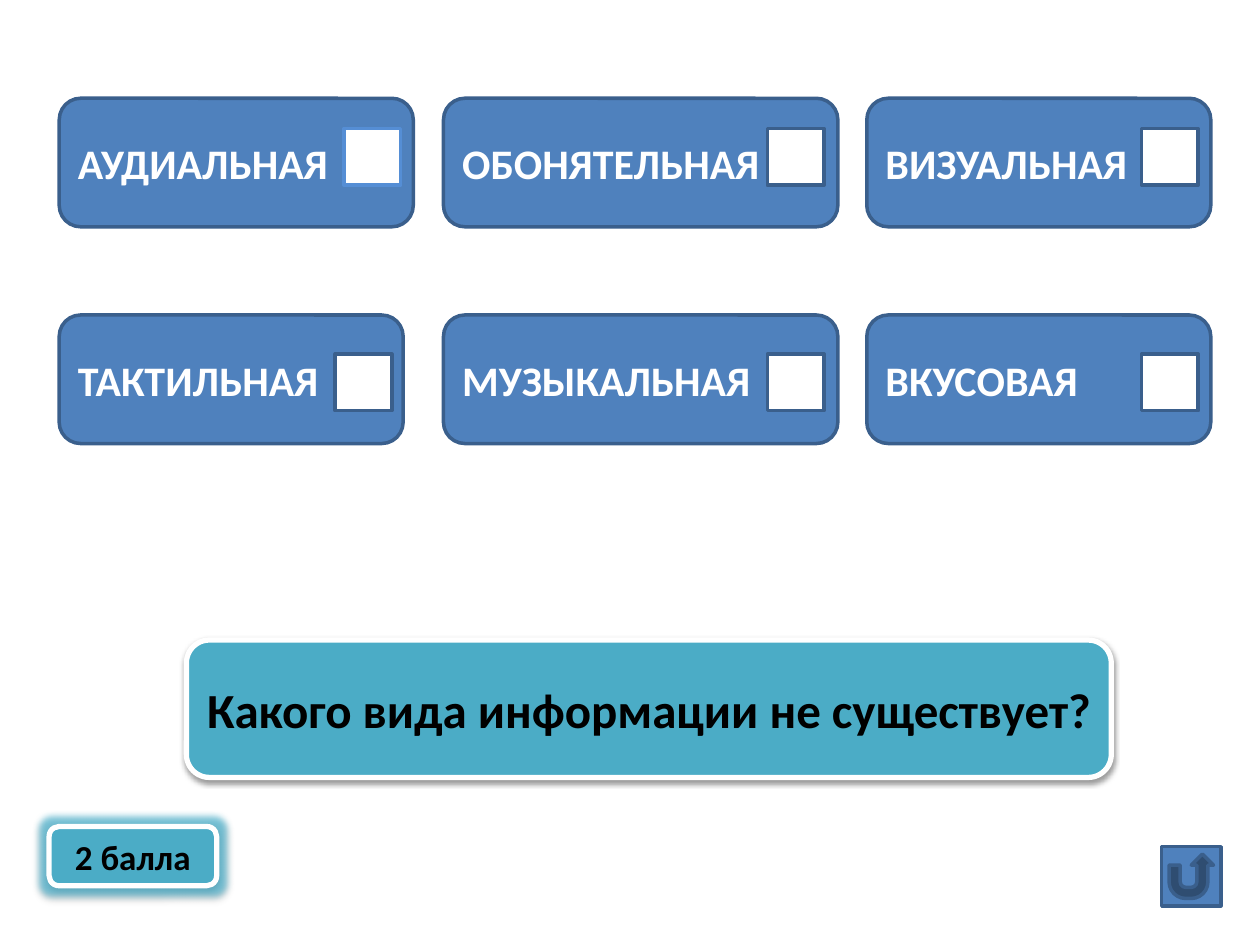
from dataclasses import dataclass

from lxml.etree import SubElement
from pptx import Presentation
from pptx.dml.color import RGBColor
from pptx.enum.shapes import MSO_SHAPE as Preset
from pptx.enum.text import MSO_ANCHOR as Anchor, PP_ALIGN as Align
from pptx.oxml.ns import qn
from pptx.shapes.autoshape import Shape
from pptx.util import Inches, Pt

COLORS = {
    "blue": "4F81BD", "edge": "3A5F8C", "light_edge": "558ED5", "teal": "4BACC6",
    "glow": "3BB5D6", "white": "FFFFFF", "black": "000000",
}
COLUMNS = (0.47, 3.52, 6.88)
ROWS = (0.78, 2.5)
CHECK_TOPS = (1.02, 2.81)
CARD_HEIGHT = 1.02
CHECK_SIZE = 0.45


@dataclass(frozen=True)
class Answer:
    text: str
    column: int
    row: int
    width: float
    check_left: float
    check_edge: str = "edge"


@dataclass(frozen=True)
class Panel:
    text: str
    left: float
    top: float
    width: float
    height: float
    size: int
    glow: float = 0


ANSWERS = (
    Answer("АУДИАЛЬНАЯ", 0, 0, 2.81, 2.73, "light_edge"),
    Answer("ОБОНЯТЕЛЬНАЯ", 1, 0, 3.13, 6.09),
    Answer("ВИЗУАЛЬНАЯ", 2, 0, 2.73, 9.06),
    Answer("ТАКТИЛЬНАЯ", 0, 1, 2.73, 2.66),
    Answer("МУЗЫКАЛЬНАЯ", 1, 1, 3.13, 6.09),
    Answer("ВКУСОВАЯ", 2, 1, 2.73, 9.06),
)
QUESTION = Panel("Какого вида информации не существует?", 1.48, 5.08, 7.34, 1.09, 28)
SCORE = Panel("2 балла", 0.39, 6.56, 1.33, 0.47, 20, glow=8)


def add_box(page, preset: Preset, left: float, top: float, width: float, height: float,
            fill: str, edge: str = "edge", weight: float = 2) -> Shape:
    box = page.shapes.add_shape(preset, *map(Inches, (left, top, width, height)))
    box.shadow.inherit = False
    box.fill.solid()
    box.fill.fore_color.rgb = RGBColor.from_string(COLORS[fill])
    box.line.color.rgb = RGBColor.from_string(COLORS[edge])
    box.line.width = Pt(weight)
    return box


def write(box: Shape, text: str, size: int, color: str, align: Align) -> None:
    frame = box.text_frame
    frame.text = text
    frame.word_wrap = True
    frame.vertical_anchor = Anchor.MIDDLE
    para = frame.paragraphs[0]
    para.alignment = align
    font = para.runs[0].font
    font.name, font.size, font.bold = "Calibri", Pt(size), True
    font.color.rgb = RGBColor.from_string(COLORS[color])


def add_effect(box: Shape, kind: str, color: str, alpha: int, **settings) -> None:
    effects = box._element.spPr.find(qn("a:effectLst"))
    effect = SubElement(effects, qn(f"a:{kind}"),
                        {name: str(value) for name, value in settings.items()})
    tint = SubElement(effect, qn("a:srgbClr"), val=COLORS[color])
    SubElement(tint, qn("a:alpha"), val=str(alpha * 1000))


def add_panel(page, panel: Panel) -> None:
    box = add_box(page, Preset.ROUNDED_RECTANGLE, panel.left, panel.top,
                  panel.width, panel.height, "teal", "white", 3)
    if panel.glow:
        add_effect(box, "glow", "glow", 60, rad=Pt(panel.glow))
    add_effect(box, "outerShdw", "black", 38, blurRad=Pt(3.1), dist=Pt(1.6),
               dir=90 * 60000, rotWithShape=0)
    write(box, panel.text, panel.size, "black", Align.CENTER)


def add_answer(page, answer: Answer) -> None:
    card = add_box(page, Preset.ROUNDED_RECTANGLE, COLUMNS[answer.column],
                   ROWS[answer.row], answer.width, CARD_HEIGHT, "blue")
    write(card, answer.text, 24, "white", Align.LEFT)
    add_box(page, Preset.RECTANGLE, answer.check_left, CHECK_TOPS[answer.row],
            CHECK_SIZE, CHECK_SIZE, "white", answer.check_edge)


def main() -> None:
    deck = Presentation()
    deck.slide_width, deck.slide_height = Inches(10), Inches(7.5)
    page = deck.slides.add_slide(deck.slide_layouts[6])
    add_panel(page, QUESTION)
    for answer in ANSWERS:
        add_answer(page, answer)
    add_box(page, Preset.ACTION_BUTTON_RETURN, 9.22, 6.72, 0.47, 0.47, "blue")
    add_panel(page, SCORE)
    deck.save("out.pptx")


if __name__ == "__main__":
    main()
